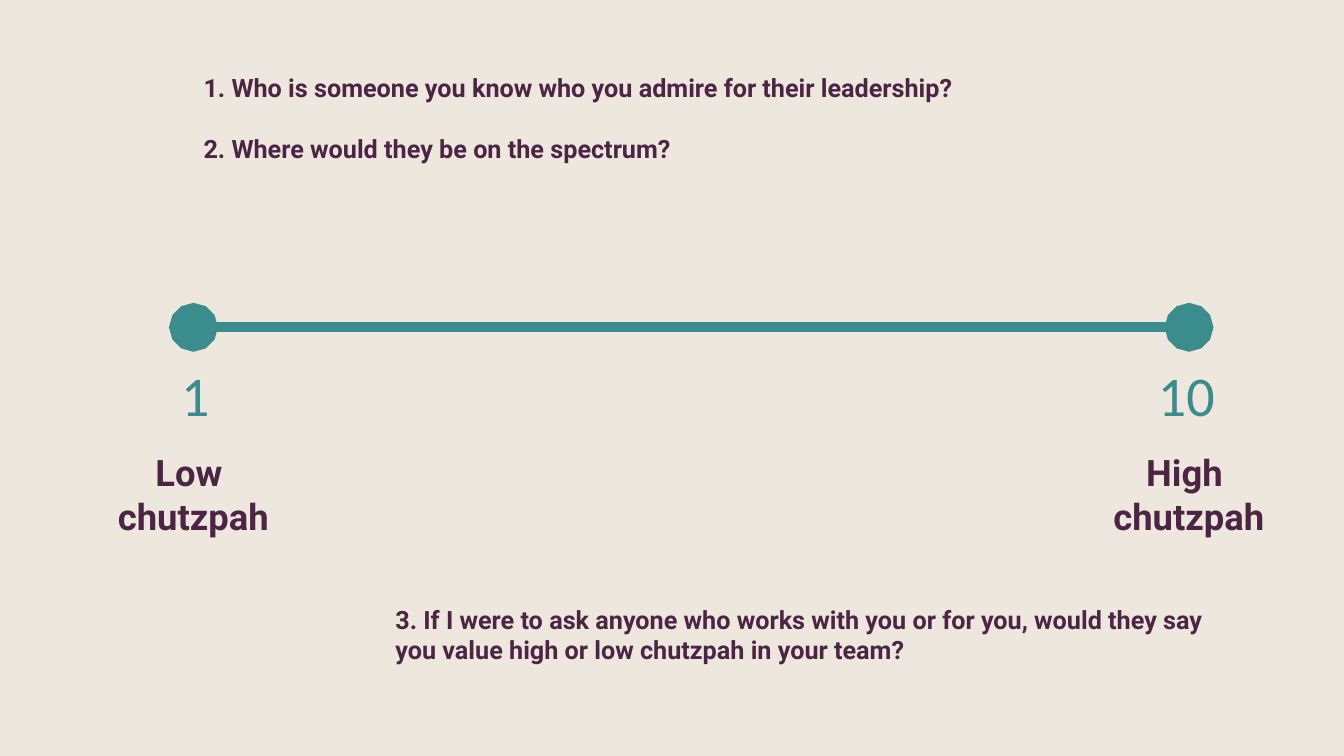
"""Build the leadership spectrum slide."""
from dataclasses import dataclass

from lxml.etree import SubElement as Sub
from pptx import Presentation
from pptx.dml.color import RGBColor as Rgb
from pptx.enum.shapes import MSO_CONNECTOR as Conn, MSO_SHAPE as Kind
from pptx.enum.text import MSO_ANCHOR as Anchor, MSO_AUTO_SIZE as Auto, PP_ALIGN as Align
from pptx.oxml.ns import qn
from pptx.slide import Slide
from pptx.text.text import TextFrame as Frame
from pptx.util import Pt

HEX = {"sand": "EDE7DD", "plum": "4C2544", "teal": "3A8C8D"}
LINE_Y = 233.8


@dataclass
class Style:
    """Look of a text."""
    font: str
    size: int
    color: str
    bold: bool
    align: Align = Align.LEFT


@dataclass
class Query:
    """Body placeholder with its questions."""
    idx: int
    box: tuple[float, float, float, float]
    text: str


@dataclass
class End:
    """One end of the spectrum."""
    x: float
    mark: str
    shift: float
    label: str


ASK = Style("Roboto", 18, "plum", True)
LABEL = Style("Roboto", 26, "plum", True, Align.CENTER)
MARK = Style("Calibri", 40, "teal", False)

QUERIES = [
    Query(1, (138.2, 48, 711.5, 73),
          "1. Who is someone you know who you admire for their leadership?\n"
          "2. Where would they be on the spectrum?"),
    Query(2, (275.2, 428.2, 603.5, 51),
          "3. If I were to ask anyone who works with you or for you, "
          "would they say you value high or low chutzpah in your team?"),
]
ENDS = [
    End(138.2, "1", -15.8, "Low \vchutzpah"),
    End(849.3, "10", -29.2, "High \vchutzpah"),
]


def write(frame: Frame, text: str, style: Style) -> None:
    """Fill a frame with text in one style."""
    frame.text = text
    frame.word_wrap = True
    frame.auto_size = Auto.NONE
    frame.vertical_anchor = Anchor.TOP
    for par in frame.paragraphs:
        par.alignment = style.align
        par.space_before = Pt(0)
        for run in par.runs:
            font = run.font
            font.name, font.size, font.bold = style.font, Pt(style.size), style.bold
            font.color.rgb = Rgb.from_string(HEX[style.color])


def draw_back(slide: Slide) -> None:
    """Lay the sand panel behind everything."""
    panel = slide.shapes.add_shape(Kind.RECTANGLE, Pt(-1.2), Pt(0), Pt(961.2), Pt(540))
    panel.shadow.inherit = False
    panel.fill.solid()
    panel.fill.fore_color.rgb = Rgb.from_string(HEX["sand"])
    panel.line.fill.background()
    slide.shapes._spTree.insert(2, panel._element)


def ask(slide: Slide, query: Query) -> None:
    """Place questions in a body placeholder without bullets."""
    body = slide.placeholders[query.idx]
    body.left, body.top, body.width, body.height = map(Pt, query.box)
    write(body.text_frame, query.text, ASK)
    for num, par in enumerate(body.text_frame.paragraphs):
        par.space_before = Pt(22 if num else 0)
        props = par._p.get_or_add_pPr()
        props.set("marL", "0")
        props.set("indent", "0")
        Sub(props, qn("a:buNone"))


def draw_line(slide: Slide) -> None:
    """Draw the spectrum line with a round dot at each end."""
    first, last = ENDS
    link = slide.shapes.add_connector(
        Conn.STRAIGHT, Pt(first.x), Pt(LINE_Y), Pt(last.x), Pt(LINE_Y))
    link.line.width = Pt(7)
    link.line.color.rgb = Rgb.from_string(HEX["teal"])
    for tag in ("a:headEnd", "a:tailEnd"):
        Sub(link.line._get_or_add_ln(), qn(tag), type="oval", w="lg", len="lg")
    Sub(link._element.spPr, qn("a:effectLst"))


def draw_end(slide: Slide, end: End) -> None:
    """Write the label and the number under one end."""
    label = slide.shapes.add_textbox(Pt(end.x - 84), Pt(318), Pt(168), Pt(70.5))
    write(label.text_frame, end.label, LABEL)
    mark = slide.shapes.add_textbox(Pt(end.x + end.shift), Pt(254), Pt(63.5), Pt(55.5))
    write(mark.text_frame, end.mark, MARK)


def main() -> None:
    """Build and save the deck."""
    deck = Presentation()
    deck.slide_width, deck.slide_height = Pt(960), Pt(540)
    slide = deck.slides.add_slide(deck.slide_layouts[3])
    title = slide.shapes.title.element
    title.getparent().remove(title)
    draw_back(slide)
    for query in QUERIES:
        ask(slide, query)
    draw_line(slide)
    for end in ENDS:
        draw_end(slide, end)
    deck.save("out.pptx")


if __name__ == "__main__":
    main()
